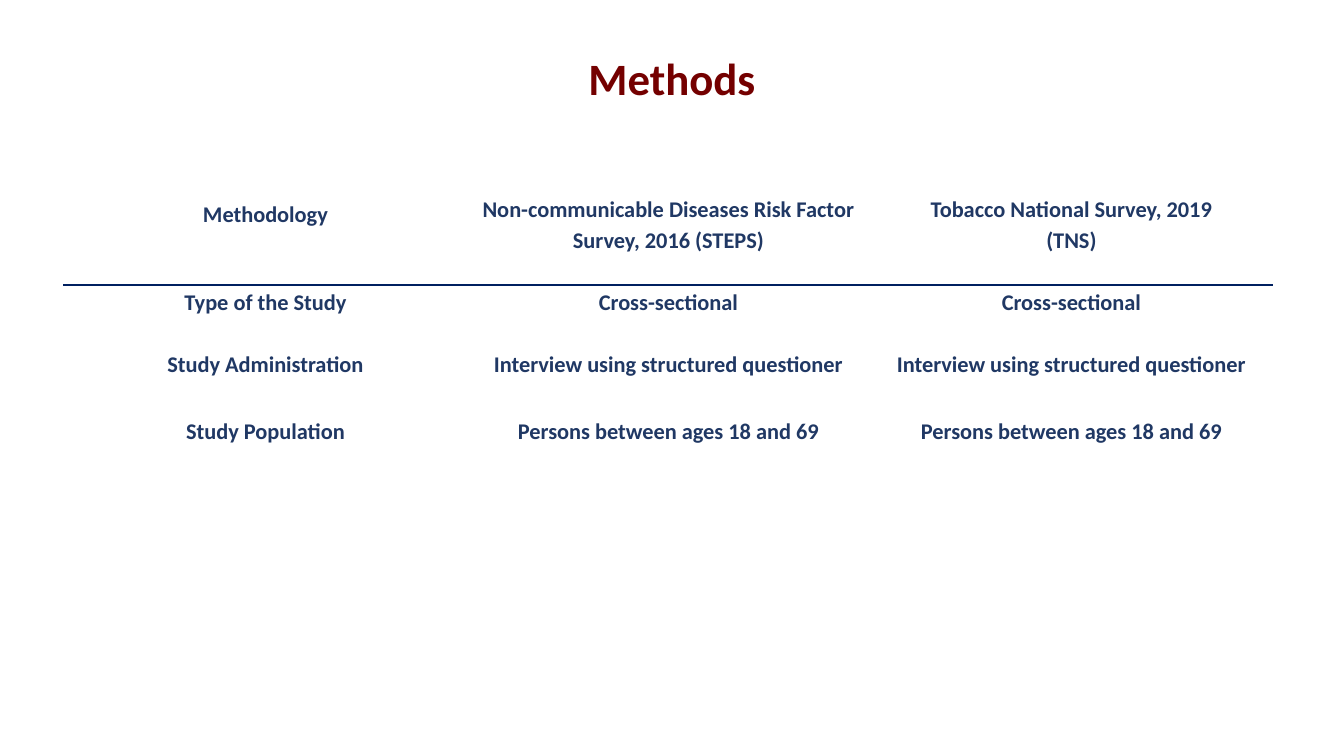
import pptx
import pptx.util
import pptx.dml.color
import pptx.enum.text
import pptx.oxml
import pptx.oxml.ns

TITLE = "Methods"
ROWS = [
    ("Methodology",
     "Non-communicable Diseases Risk Factor Survey, 2016 (STEPS)",
     "Tobacco National Survey, 2019\n(TNS)"),
    ("Type of the Study", "Cross-sectional", "Cross-sectional"),
    ("Study Administration",
     "Interview using structured questioner",
     "Interview using structured questioner"),
    ("Study Population",
     "Persons between ages 18 and 69",
     "Persons between ages 18 and 69"),
    ("", "", ""),
]
HEIGHTS = [93, 62, 62, 67, 67]
COLUMN = 403
LEFT, TOP = 64, 192
PADDED = {(0, 0), (3, 0), (3, 1), (3, 2)}  # cells with wider insets

THEME = {
    "title": {"name": "Calibri", "size": 32, "color": "740000", "lead": 0.9},
    "body": {"name": "Calibri", "size": 16, "color": "203864", "lead": 1.14},
    "rule": "002060",
}
SCALE = 914400 / 100.8


def px(n):
    return pptx.util.Emu(round(n * SCALE))


def put(obj, values):
    for key, value in values.items():
        setattr(obj, key, value)


def write(frame, text, style):
    frame.text = text
    for para in frame.paragraphs:
        put(para, {"alignment": pptx.enum.text.PP_ALIGN.CENTER,
                   "line_spacing": style["lead"]})
        for run in para.runs:
            put(run.font, {"name": style["name"], "bold": True,
                           "size": pptx.util.Pt(style["size"])})
            run.font.color.rgb = pptx.dml.color.RGBColor.from_string(style["color"])


def edge(cell, side):
    """Draw a 1 pt border on one side, which must be set before the fill."""
    cell._tc.get_or_add_tcPr().append(pptx.oxml.parse_xml(
        f'<a:{side} {pptx.oxml.ns.nsdecls("a")} w="12700"><a:solidFill>'
        f'<a:srgbClr val="{THEME["rule"]}"/></a:solidFill></a:{side}>'))


def heading(slide):
    box = slide.shapes.add_textbox(px(92), px(40), px(1160), px(81))
    put(box.text_frame, {"word_wrap": True,
                         "vertical_anchor": pptx.enum.text.MSO_ANCHOR.MIDDLE})
    write(box.text_frame, TITLE, THEME["title"])


def grid(slide):
    count = len(ROWS[0])
    table = slide.shapes.add_table(
        len(ROWS), count, px(LEFT), px(TOP),
        px(COLUMN * count), px(sum(HEIGHTS))).table
    put(table, {"first_row": False, "horz_banding": False})
    for column in table.columns:
        column.width = px(COLUMN)
    for r, (texts, height) in enumerate(zip(ROWS, HEIGHTS)):
        table.rows[r].height = px(height)
        for c, text in enumerate(texts):
            cell = table.cell(r, c)
            side, end = (10, 5) if (r, c) in PADDED else (7, 0)
            put(cell, {"margin_left": px(side), "margin_right": px(side),
                       "margin_top": px(end), "margin_bottom": px(end)})
            if r < 2:
                edge(cell, ("lnB", "lnT")[r])
            cell.fill.background()
            write(cell.text_frame, text, THEME["body"])


def main():
    deck = pptx.Presentation()
    put(deck, {"slide_width": px(1344), "slide_height": px(756)})
    slide = deck.slides.add_slide(deck.slide_layouts[6])
    heading(slide)
    grid(slide)
    deck.save("out.pptx")


if __name__ == "__main__":
    main()
